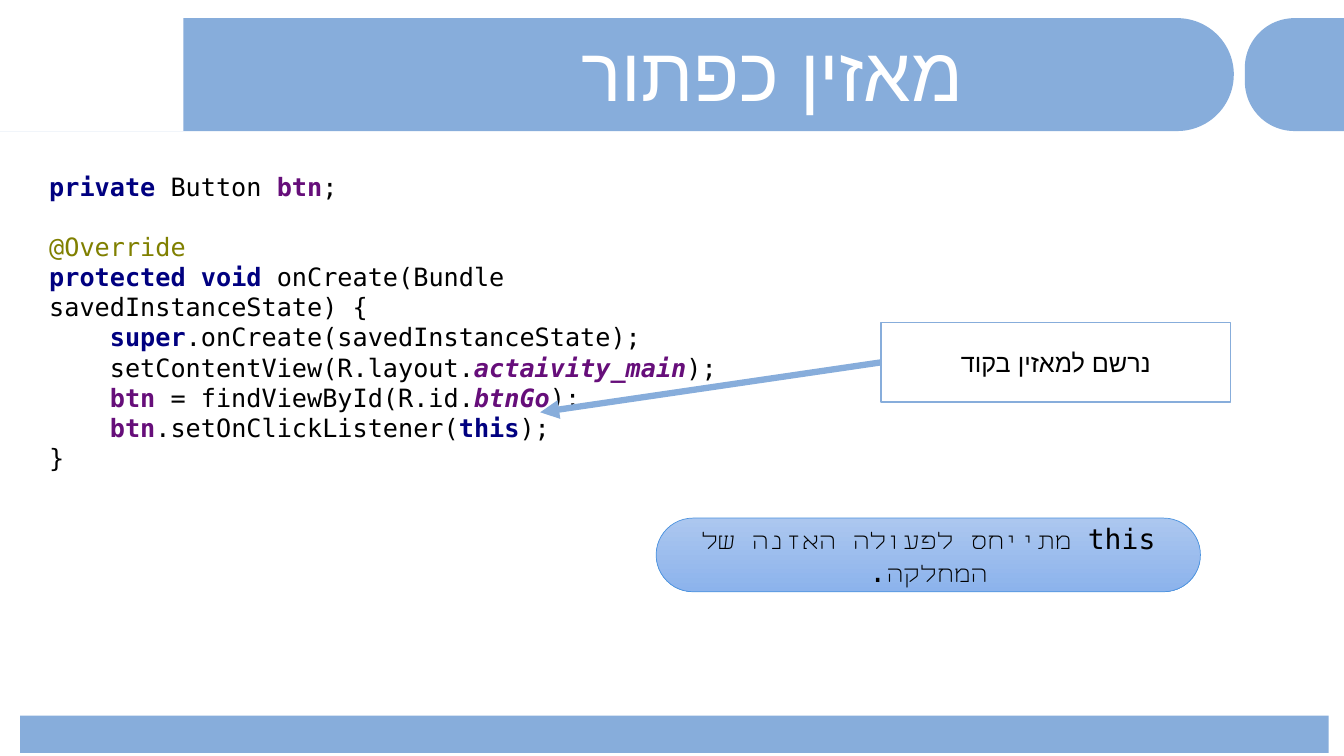
from dataclasses import dataclass

from lxml.etree import SubElement
from pptx import Presentation
from pptx.dml.color import RGBColor
from pptx.enum.shapes import MSO_CONNECTOR, MSO_SHAPE
from pptx.enum.text import MSO_ANCHOR, PP_ALIGN
from pptx.oxml.ns import qn
from pptx.util import Pt


@dataclass(frozen=True)
class Theme:
    """Colours, fonts and type sizes of the slide."""
    blue: str = "87ADDB"
    white: str = "FFFFFF"
    black: str = "000000"
    keyword: str = "000080"
    member: str = "660E7A"
    annotation: str = "808000"
    pill_line: str = "4C93DF"
    pill_top: str = "ACC7EF"
    pill_bottom: str = "8CB3EC"
    sans: str = "Arial"
    mono: str = "DejaVu Sans Mono"
    title_size: float = 54
    body_size: float = 18
    note_size: float = 20


THEME = Theme()
BAND_TOP, BAND_HEIGHT = 12.96, 80.64
CODE_INDENT = 43.35
CODE_LINE = 21

STYLES = {
    "plain": {},
    "keyword": {"color": THEME.keyword, "bold": True},
    "member": {"color": THEME.member, "bold": True},
    "resource": {"color": THEME.member, "bold": True, "italic": True},
    "annotation": {"color": THEME.annotation},
}

CODE = [
    (0, 0, [("private ", "keyword"), ("Button ", "plain"), ("btn", "member"), (";", "plain")]),
    (0, CODE_LINE, [("@Override", "annotation")]),
    (0, 0, [("protected void ", "keyword"), ("onCreate(Bundle savedInstanceState) {", "plain")]),
    (1, 0, [("super", "keyword"), (".onCreate(savedInstanceState);", "plain")]),
    (1, 0, [("setContentView(R.layout.", "plain"), ("actaivity_main", "resource"), (");", "plain")]),
    (1, 0, [("btn ", "member"), ("= findViewById(R.id.", "plain"), ("btnGo", "resource"), (");", "plain")]),
    (1, 0, [("btn", "member"), (".setOnClickListener(", "plain"), ("this", "keyword"), (");", "plain")]),
    (0, 0, [("}", "plain")]),
]


def rgb(color):
    """Turn a hex string into a colour."""
    return RGBColor.from_string(color)


def add_text(p, text, font=THEME.sans, size=THEME.body_size, color=THEME.black,
             bold=False, italic=False):
    """Add a formatted run to a paragraph."""
    r = p.add_run()
    r.text = text
    f = r.font
    f.name, f.size, f.bold, f.italic = font, Pt(size), bold, italic
    f.color.rgb = rgb(color)
    SubElement(f._element, qn("a:cs"), typeface=font)


def add_hebrew(sp, text, **fmt):
    """Write one centred right-to-left paragraph and return it."""
    tf = sp.text_frame
    tf.word_wrap = True
    tf.vertical_anchor = MSO_ANCHOR.MIDDLE
    p = tf.paragraphs[0]
    p.alignment = PP_ALIGN.CENTER
    p._p.get_or_add_pPr().set("rtl", "1")
    add_text(p, text, **fmt)
    return p


def add_box(s, kind, left, top, width, height, fill=None, line=None, weight=1):
    """Add a preset shape with a plain fill and an optional outline."""
    sp = s.shapes.add_shape(kind, Pt(left), Pt(top), Pt(width), Pt(height))
    sp.shadow.inherit = False
    if fill:
        sp.fill.solid()
        sp.fill.fore_color.rgb = rgb(fill)
    if line:
        sp.line.color.rgb = rgb(line)
        sp.line.width = Pt(weight)
    else:
        sp.line.fill.background()
    return sp


def add_band(s, left, width, rotation):
    """Add a header band with one round end, on the side set by the rotation."""
    shift = (width - BAND_HEIGHT) / 2
    sp = add_box(s, MSO_SHAPE.ROUND_2_SAME_RECTANGLE, left + shift, BAND_TOP - shift,
                 BAND_HEIGHT, width, THEME.blue)
    sp.adjustments[0] = 0.5
    sp.rotation = rotation


def add_title(s, text):
    """Fill the title placeholder and bring it in front of the band."""
    title = s.shapes.title
    title.left, title.top, title.width, title.height = Pt(167), Pt(26.6), Pt(769.7), Pt(56.9)
    p = add_hebrew(title, text, size=THEME.title_size, color=THEME.white)
    p.line_spacing = 0.9
    p.space_before = Pt(10)
    s.shapes.element.append(title.element)


def add_code(s, lines):
    """Add the code listing, one paragraph per line."""
    sp = add_box(s, MSO_SHAPE.RECTANGLE, 28.1, 128.2, 532.8, 203.8, THEME.white)
    tf = sp.text_frame
    tf.word_wrap = True
    tf.vertical_anchor = MSO_ANCHOR.MIDDLE
    for i, (level, gap, runs) in enumerate(lines):
        p = tf.add_paragraph() if i else tf.paragraphs[0]
        p.alignment = PP_ALIGN.LEFT
        p.space_before = Pt(gap)
        p._p.get_or_add_pPr().set("marL", str(Pt(level * CODE_INDENT)))
        for text, style in runs:
            add_text(p, text, font=THEME.mono, **STYLES[style])


def add_arrow(s, source, x, y):
    """Draw an arrow from the left side of a box to a point."""
    c = s.shapes.add_connector(MSO_CONNECTOR.STRAIGHT, 0, 0, Pt(x), Pt(y))
    c.begin_connect(source, 1)
    c.line.color.rgb = rgb(THEME.blue)
    c.line.width = Pt(4.5)
    SubElement(c.line._get_or_add_ln(), qn("a:tailEnd"), type="triangle")
    SubElement(c.element.spPr, qn("a:effectLst"))


def add_pill(s, text):
    """Add the rounded note with a vertical gradient."""
    sp = add_box(s, MSO_SHAPE.ROUNDED_RECTANGLE, 468.7, 370.1, 388.8, 52.6,
                 line=THEME.pill_line, weight=0.5)
    sp.adjustments[0] = 0.5
    sp.fill.gradient()
    sp.fill.gradient_angle = 270
    for stop, color in zip(sp.fill.gradient_stops, (THEME.pill_top, THEME.pill_bottom)):
        stop.color.rgb = rgb(color)
    add_hebrew(sp, text, font=THEME.mono, size=THEME.note_size)


def main():
    """Build the slide and save it."""
    prs = Presentation()
    prs.slide_width, prs.slide_height = Pt(960), Pt(540)
    s = prs.slides.add_slide(prs.slide_layouts[5])
    add_band(s, 0, 881.3, 90)
    add_band(s, 889.2, 70.8, 270)
    add_box(s, MSO_SHAPE.RECTANGLE, 0, BAND_TOP, 131, BAND_HEIGHT, THEME.white)
    add_box(s, MSO_SHAPE.RECTANGLE, 14.4, 511.2, 934.6, 26.6, THEME.blue)
    add_title(s, "מאזין כפתור")
    add_code(s, CODE)
    callout = add_box(s, MSO_SHAPE.RECTANGLE, 629.3, 230.4, 249.8, 56.9, THEME.white, THEME.blue)
    add_hebrew(callout, "נרשם למאזין בקוד")
    add_arrow(s, callout, 385.9, 294.5)
    add_pill(s, "this מתייחס לפעולה האזנה של המחלקה.")
    prs.save("out.pptx")


if __name__ == "__main__":
    main()
